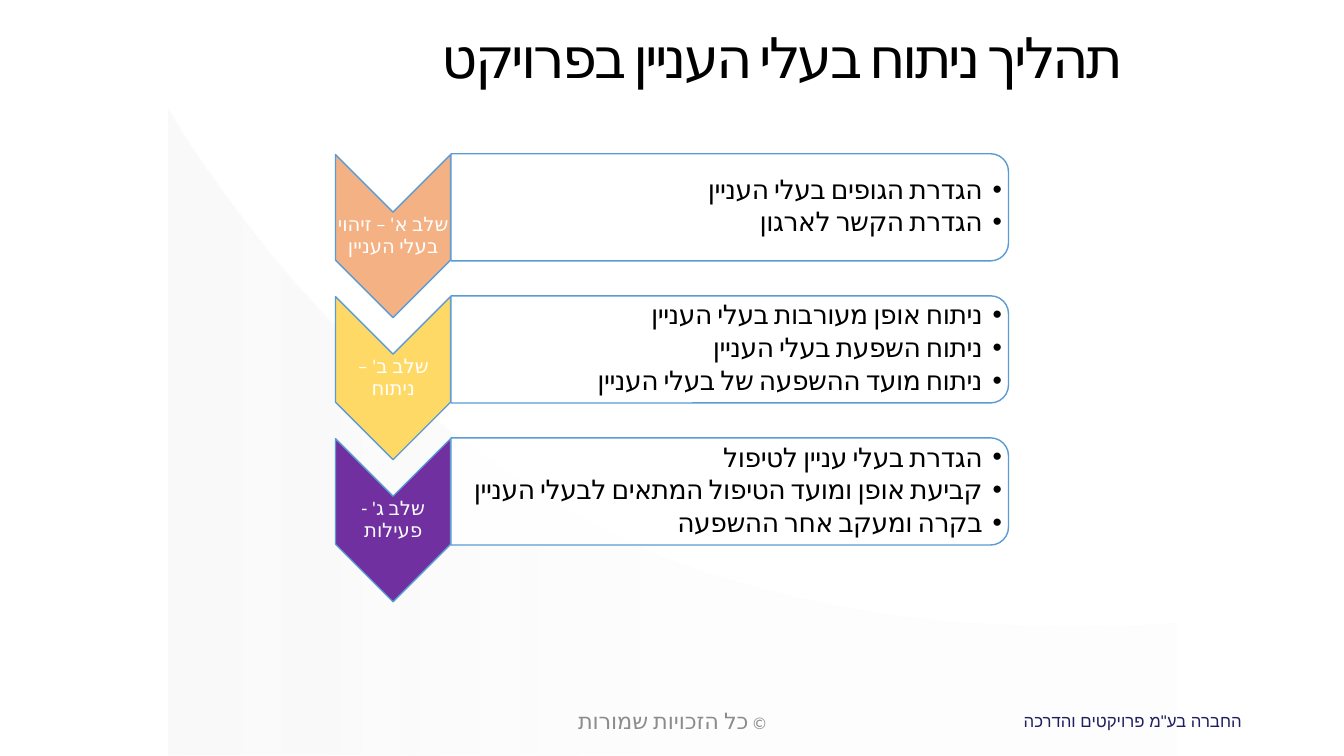
from lxml import etree
from pptx import Presentation
from pptx.dml.color import RGBColor
from pptx.enum.lang import MSO_LANGUAGE_ID
from pptx.enum.shapes import MSO_SHAPE
from pptx.enum.text import MSO_ANCHOR, PP_ALIGN
from pptx.oxml.ns import qn
from pptx.util import Cm, Pt

CHEVRON = MSO_SHAPE.CHEVRON
PANEL = MSO_SHAPE.ROUND_2_SAME_RECTANGLE
TOP, MIDDLE = MSO_ANCHOR.TOP, MSO_ANCHOR.MIDDLE
CENTER, RIGHT = PP_ALIGN.CENTER, PP_ALIGN.RIGHT
HEBREW = MSO_LANGUAGE_ID.HEBREW

# Text styles hold font, size, colour and letter spacing in hundredths of a point
THEME = {
    "white": RGBColor.from_string("FFFFFF"),
    "swoosh": RGBColor.from_string("D9D9D9"),
    "line": RGBColor.from_string("5B9BD5"),
    "steps": [RGBColor.from_string(c) for c in ("F4B183", "FFD966", "7030A0")],
    "bullet": "Arial",
    "title": ("Calibri", 40, "000000", -210),
    "step": ("Calibri", 14, "FFFFFF", 0),
    "list": ("Calibri", 19, "000000", -30),
    "firm": ("Arial", 12, "1F1F5F", 0),
    "mark": ("Calibri", 12, "8C8C8C", 0),
    "rights": ("Calibri", 16, "8C8C8C", 0),
}

STEPS = [
    ("שלב א' – זיהוי בעלי העניין",
     ["הגדרת הגופים בעלי העניין", "הגדרת הקשר לארגון"]),
    ("שלב ב' – ניתוח",
     ["ניתוח אופן מעורבות בעלי העניין", "ניתוח השפעת בעלי העניין",
      "ניתוח מועד ההשפעה של בעלי העניין"]),
    ("שלב ג' - פעילות",
     ["הגדרת בעלי עניין לטיפול", "קביעת אופן ומועד הטיפול המתאים לבעלי העניין",
      "בקרה ומעקב אחר ההשפעה"]),
]

# Outline of the background swoosh, in hundredths of a centimetre
CURVE = [
    (2964, 1572), (2842, 1580), (2705, 1582), (2576, 1580), (2431, 1572),
    (2273, 1557), (2106, 1529), (1933, 1491), (1760, 1440), (1648, 1397),
    (1506, 1331), (1372, 1255), (1247, 1171), (1130, 1085), (1021, 993),
    (919, 899), (828, 805), (744, 714), (671, 627), (577, 505), (505, 404),
    (444, 310), (424, 274), (424, 1905), (2964, 1905),
]

deck = Presentation()
deck.slide_width, deck.slide_height = Cm(33.87), Cm(19.05)
slide = deck.slides.add_slide(deck.slide_layouts[6])
shapes = slide.shapes


def fade(node, share):
    """Set the opacity, in percent, of every colour inside node."""
    for color in node.iter(qn("a:srgbClr")):
        etree.SubElement(color, qn("a:alpha"), val=str(share * 1000))


def write(place, lines, align, anchor=MIDDLE, inset=None, space=None, bullet=False):
    """Add a right-to-left text box; each line is a list of (text, style)."""
    frame = shapes.add_textbox(*map(Cm, place)).text_frame
    form = {"word_wrap": True, "vertical_anchor": anchor}
    if inset is not None:
        for side in ("left", "top", "right", "bottom"):
            form["margin_" + side] = Cm(inset)
    for key, value in form.items():
        setattr(frame, key, value)
    for i, line in enumerate(lines):
        para = frame.paragraphs[0] if i == 0 else frame.add_paragraph()
        para.alignment, para.line_spacing = align, space
        props = para._p.get_or_add_pPr()
        props.set("rtl", "1")
        if bullet:
            para.level, para.space_after = 1, Pt(2.8)
            props.set("marL", str(Cm(0.48)))
            props.set("indent", str(-Cm(0.48)))
            etree.SubElement(props, qn("a:buFont"), typeface=THEME["bullet"])
            etree.SubElement(props, qn("a:buChar"), char="•")
        for text, style in line:
            run = para.add_run()
            run.text = text
            name, size, color, gap = THEME[style]
            font = {"name": name, "size": Pt(size), "language_id": HEBREW}
            for key, value in font.items():
                setattr(run.font, key, value)
            run.font.color.rgb = RGBColor.from_string(color)
            look = run._r.get_or_add_rPr()
            look.set("spc", str(gap))
            etree.SubElement(look, qn("a:cs"), typeface=name)


# Background swoosh
outline = shapes.build_freeform(*CURVE[0], scale=Cm(0.01))
outline.add_line_segments(CURVE[1:], close=True)
swoosh = outline.convert_to_shape()
swoosh.shadow.inherit = False
swoosh.line.fill.background()
swoosh.fill.gradient()
swoosh.fill.gradient_angle = 0
for stop, (spot, share) in zip(swoosh.fill.gradient_stops, [(0, 15), (0.5, 5)]):
    stop.position = spot
    stop.color.rgb = THEME["swoosh"]
    fade(stop._gs, share)

# Title
write((5.28, 0.64, 23.29, 1.85),
      [[("תהליך ניתוח בעלי העניין בפרויקט", "title")]],
      RIGHT, anchor=TOP, space=0.9)

# Steps: a chevron with its label, and a panel with its list
for row, (label, items) in enumerate(STEPS):
    drop = row * 3.58
    parts = [
        (CHEVRON, (7.85, 4.5 + drop, 4.11, 2.9), THEME["steps"][row]),
        (PANEL, (17.04, -1.8 + drop, 2.7, 14.05), THEME["white"]),
    ]
    for kind, place, color in parts:
        part = shapes.add_shape(kind, *map(Cm, place))
        part.rotation = 90
        part.shadow.inherit = False
        part.fill.solid()
        part.fill.fore_color.rgb = color
        if kind == PANEL:
            fade(part._element.spPr, 90)
        part.line.color.rgb = THEME["line"]
        part.line.width = Pt(1)
    write((8.46, 5.33 + drop, 2.9, 1.24), [[(label, "step")]], CENTER,
          inset=0.02, space=0.9)
    write((11.35, 4.01 + drop, 13.92, 2.41), [[(item, "list")] for item in items],
          RIGHT, inset=0.02, space=0.9, bullet=True)

# Footer
write((23.93, 17.65, 7.62, 1.02),
      [[("החברה בע\"מ פרויקטים והדרכה", "firm")]], RIGHT)
write((11.23, 17.65, 11.43, 1.02),
      [[("© ", "mark"), ("כל הזכויות שמורות", "rights")]], CENTER)

deck.save("out.pptx")
